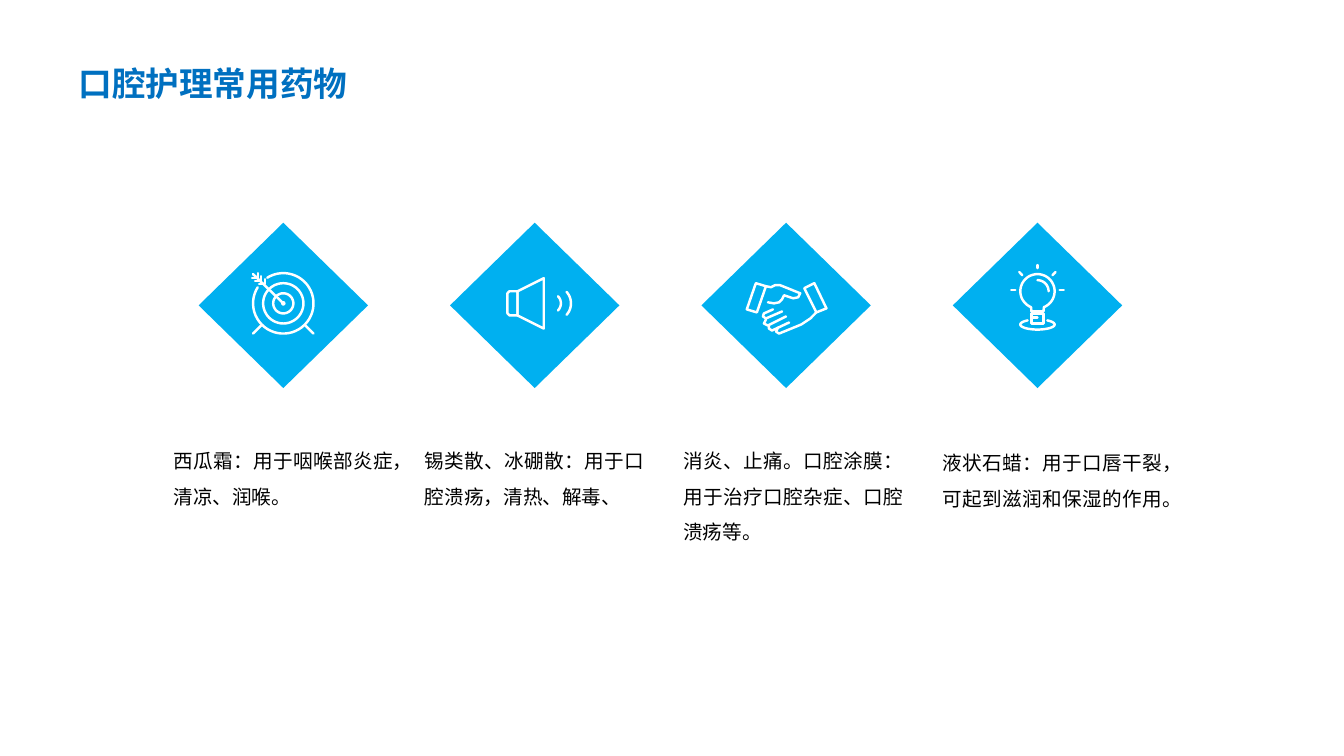
from dataclasses import dataclass
from math import cos, radians, sin

from lxml import etree
from pptx import Presentation
from pptx.dml.color import RGBColor
from pptx.enum.shapes import MSO_SHAPE
from pptx.enum.text import MSO_AUTO_SIZE, PP_ALIGN
from pptx.oxml.ns import qn
from pptx.util import Inches, Pt

DIAMOND = MSO_SHAPE.DIAMOND
FIT = MSO_AUTO_SIZE.SHAPE_TO_FIT_TEXT
LEFT, JUSTIFY = PP_ALIGN.LEFT, PP_ALIGN.JUSTIFY


@dataclass(frozen=True)
class Theme:
    title: RGBColor = RGBColor(0x00, 0x70, 0xC0)
    tile: RGBColor = RGBColor(0x00, 0xB0, 0xF0)
    icon: RGBColor = RGBColor(0xFF, 0xFF, 0xFF)
    text: RGBColor = RGBColor(0x00, 0x00, 0x00)
    han: str = "Noto Sans CJK SC"
    latin: str = "Times New Roman"
    big: Pt = Pt(24)
    small: Pt = Pt(14)
    stroke: Pt = Pt(1.75)


THEME = Theme()


# Icon strokes: points in hundredths of an inch from the tile centre
def arc(x, y, wide, high, start, end):
    steps = 48
    turns = [radians(start + (end - start) * i / steps) for i in range(steps + 1)]
    return [(x + wide * cos(t), y + high * sin(t)) for t in turns]


def ring(x, y, size):
    return arc(x, y, size, size, 0, 360)


def loop(*points):
    return [*points, points[0]]


def flip(lines):
    return [[(-x, y) for x, y in line] for line in lines]


def target():
    legs = [[(-22, 20), (-30, 28)]]
    barbs = [[(x, y - 5), (x, y), (x - 6, y)]
             for x, y in ((-25, -27), (-22, -24), (-18, -21))]
    shaft = [(0, -2), (-30, -31)]
    return [arc(0, -2, 30, 30, 238, 572), ring(0, -2, 20), ring(0, -2, 10),
            ring(0, -2, 1), shaft, *barbs, *legs, *flip(legs)]


def horn():
    return [loop((-17, -14), (-25, -14), (-27, -12), (-27, 8), (-25, 10), (-17, 10)),
            loop((-17, -14), (9, -27), (9, 23), (-17, 10)),
            arc(16, -2, 10, 10, -45, 45), arc(19, -2, 17, 17, -42, 42)]


def hands():
    return [
        # Cuffs
        loop((-30, -22), (-39, 4), (-29, 7), (-20, -19)),
        loop((28, -22), (18, -17), (30, 7), (40, 3)),
        # Upper hand
        [(-20, -19), (-15, -18), (-11, -20), (-6, -20), (14, -12), (12, -8),
         (7, -7), (-2, -10), (-4, -6), (-7, -3), (-12, -2), (-18, -3)],
        # Fingers
        [(-13, 4), (-22, 8), (-23, 11), (-20, 13), (-4, 6)],
        [(-20, 14), (-22, 18), (-18, 20), (0, 11)],
        [(-17, 20), (-17, 23), (-14, 25), (3, 17)],
        [(-8, 22), (-10, 26), (-7, 28), (15, 19), (24, 13), (30, 7)],
    ]


def bulb():
    rays = [[(18, -33), (15, -30)], [(26, -15), (22, -15)]]
    return [loop(*arc(0, -14, 17, 17, -248, 68), (6, 6), (-6, 6)),
            loop((-6, 8), (6, 8), (6, 18), (-6, 18)), [(-4, 12), (0, 12)],
            arc(0, -14, 11, 11, -90, 0), arc(0, 19, 17, 5, -55, 235),
            [(0, -40), (0, -37)], *rays, *flip(rays)]


def draw_icon(slide, x, y, lines):
    paths = [[(Inches(a / 100), Inches(b / 100)) for a, b in line] for line in lines]
    pen = slide.shapes.build_freeform(*paths[0][0])
    pen.add_line_segments(paths[0][1:], close=False)
    for path in paths[1:]:
        pen.move_to(*path[0])
        pen.add_line_segments(path[1:], close=False)
    icon = pen.convert_to_shape(Inches(x), Inches(y))
    icon.shadow.inherit = False
    icon.fill.background()
    icon.line.color.rgb = THEME.icon
    icon.line.width = THEME.stroke
    edge = icon.element.spPr.find(qn("a:ln"))
    edge.set("cap", "rnd")
    etree.SubElement(edge, qn("a:round"))


def add_text(slide, box, words, size, color, font, align, pad, wrap, bold=False):
    frame = slide.shapes.add_textbox(*map(Inches, box)).text_frame
    frame.word_wrap = wrap
    frame.auto_size = FIT
    frame.margin_left = frame.margin_right = Inches(pad)
    frame.margin_top = frame.margin_bottom = Inches(pad / 2)
    para = frame.paragraphs[0]
    para.alignment = align
    para.line_spacing = 1.5
    run = para.add_run()
    run.text = words
    run.font.size, run.font.bold, run.font.name = size, bold, font
    run.font.color.rgb = color
    etree.SubElement(run.font._element, qn("a:ea")).set("typeface", THEME.han)


# Heading
def add_title(slide, box, words):
    add_text(slide, box, words, THEME.big, THEME.title, THEME.han, LEFT, 0.1,
             False, bold=True)


# Diamond tile with its icon
def add_tile(slide, box, lines):
    x, y, wide, high = box
    tile = slide.shapes.add_shape(DIAMOND, *map(Inches, box))
    tile.shadow.inherit = False
    tile.fill.solid()
    tile.fill.fore_color.rgb = THEME.tile
    tile.line.fill.background()
    draw_icon(slide, x + wide / 2, y + high / 2, lines)


# Medicine: tile above, use below
def add_drug(slide, box, lines, shift, drop, words):
    x, y, wide, high = box
    add_tile(slide, box, lines)
    add_text(slide, (x + shift, y + high + drop, 2.18, 0.66), words,
             THEME.small, THEME.text, THEME.latin, JUSTIFY, 0, True)


DRUGS = (
    (target(), -0.25, 0.49, "西瓜霜：用于咽喉部炎症，清凉、润喉。"),
    (horn(), -0.25, 0.49, "锡类散、冰硼散：用于口腔溃疡，清热、解毒、"),
    (hands(), -0.18, 0.49, "消炎、止痛。口腔涂膜：用于治疗口腔杂症、口腔溃疡等。"),
    (bulb(), -0.1, 0.51, "液状石蜡：用于口唇干裂，可起到滋润和保湿的作用。"),
)


def main():
    deck = Presentation()
    deck.slide_width, deck.slide_height = Inches(13.33), Inches(7.5)
    slide = deck.slides.add_slide(deck.slide_layouts[6])
    add_title(slide, (0.68, 0.37, 2.89, 0.65), "口腔护理常用药物")
    first, last = 1.97, 9.45
    step = (last - first) / (len(DRUGS) - 1)
    for i, drug in enumerate(DRUGS):
        add_drug(slide, (first + i * step, 2.21, 1.68, 1.64), *drug)
    deck.save("out.pptx")


if __name__ == "__main__":
    main()
